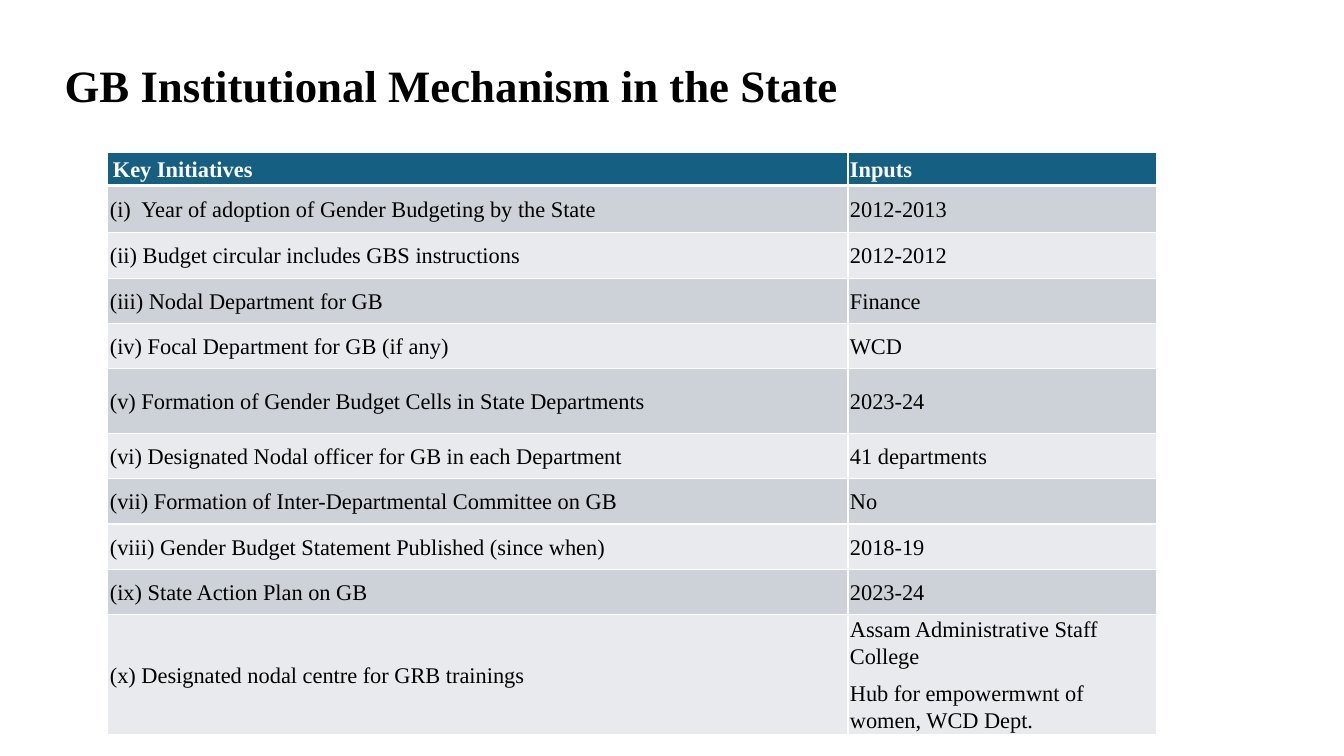
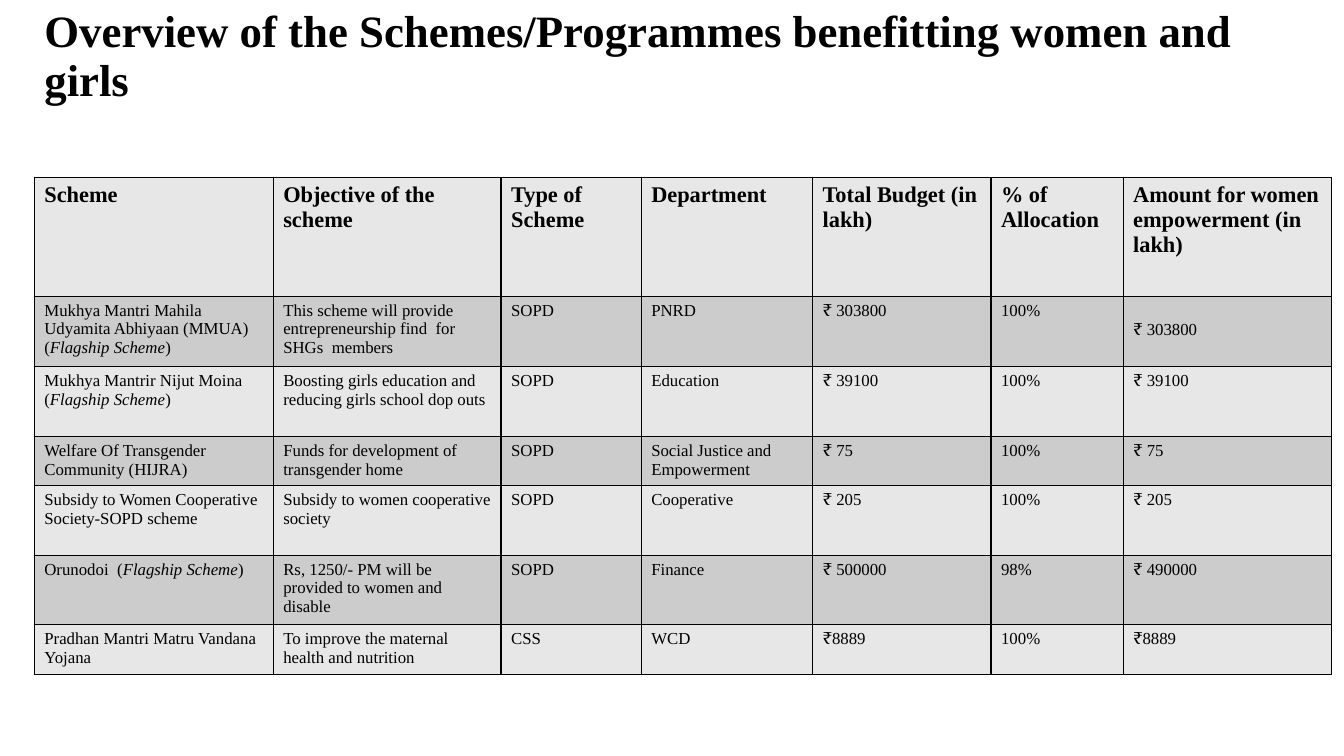
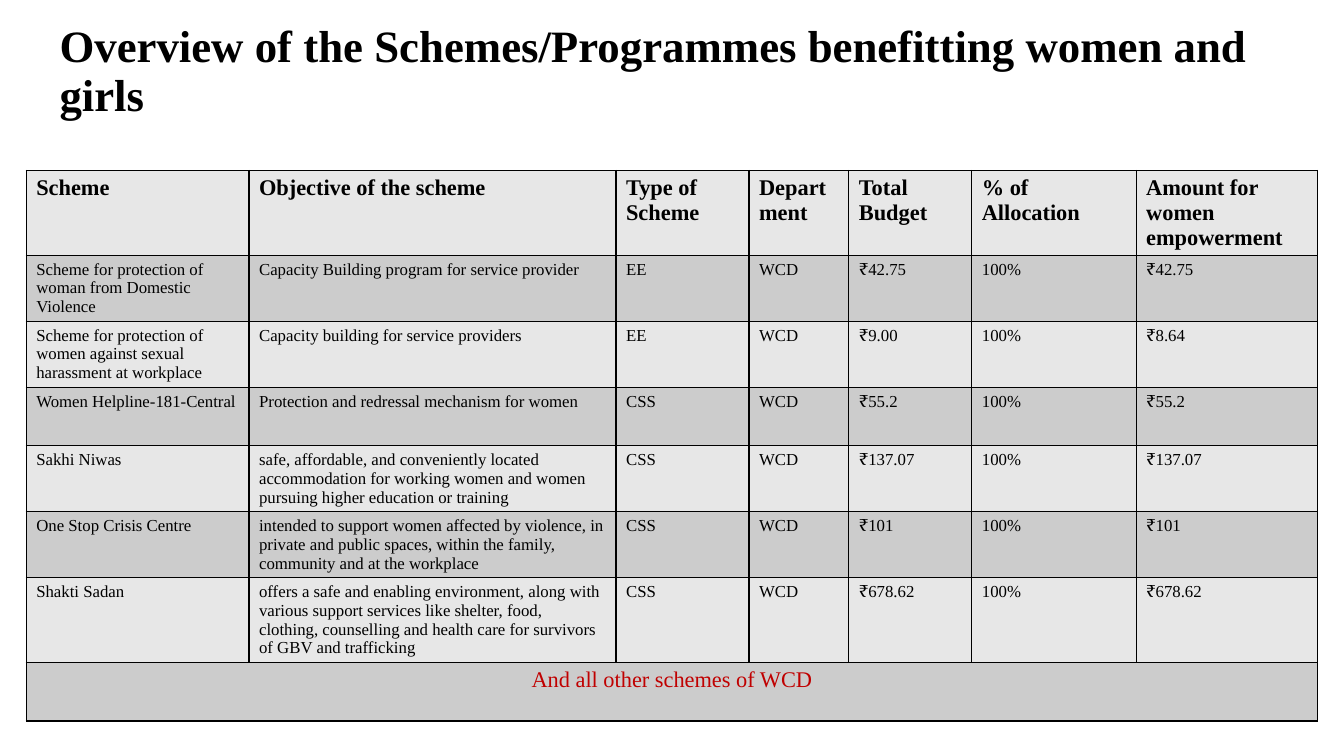
from dataclasses import dataclass
from pptx import Presentation
from pptx.dml.color import RGBColor as Rgb
from pptx.enum.text import MSO_ANCHOR as Anchor, MSO_AUTO_SIZE as Fit, PP_ALIGN as Align
from pptx.oxml import parse_xml
from pptx.oxml.ns import nsdecls
from pptx.util import Inches, Pt


@dataclass(frozen=True)
class Theme:
    font: str = "Times New Roman"
    ink: str = "000000"
    white: str = "FFFFFF"
    red: str = "C00000"
    blue: str = "156082"
    cool: tuple = ("CCD2D8", "E8EAED")
    gray: tuple = ("CCCCCC", "E7E7E7")
    title: int = 32
    head: int = 16
    body: int = 12


@dataclass(frozen=True)
class Look:
    fill: str
    bands: tuple
    edge: str
    head: str
    size: int
    pads: tuple
    anchor: object
    lead: float
    after: int
    rule: int


T = Theme()
MECH = Look(T.blue, T.cool, T.white, T.white, T.head, (0.02, 0.01, 0.02, 0.01),
            Anchor.MIDDLE, 1.07, 8, 3)
PLAN = Look(T.gray[1], T.gray, T.ink, T.ink, T.body, (0.1, 0.05, 0.1, 0.05),
            Anchor.TOP, 1.0, 0, 1)

OVER = "Overview of the Schemes/Programmes benefitting women and girls"

SLIDES = [
    dict(
        title="GB Institutional Mechanism in the State",
        box=(0.54, 0.44, 9.57, 0.87), look=MECH, at=(1.07, 1.51),
        cols=[7.34, 3.06],
        rows=[0.33, 0.47] + [0.45] * 3 + [0.64] + [0.45] * 5,
        pads={(0, 0): (0.05, 0, 0, 0)},
        cells=[
            ("Key Initiatives", "Inputs"),
            ("(i)  Year of adoption of Gender Budgeting by the State", "2012-2013"),
            ("(ii) Budget circular includes GBS instructions", "2012-2012"),
            ("(iii) Nodal Department for GB", "Finance"),
            ("(iv) Focal Department for GB (if any)", "WCD"),
            ("(v) Formation of Gender Budget Cells in State Departments", "2023-24"),
            ("(vi) Designated Nodal officer for GB in each Department", "41 departments"),
            ("(vii) Formation of Inter-Departmental Committee on GB", "No"),
            ("(viii) Gender Budget Statement Published (since when)", "2018-19"),
            ("(ix) State Action Plan on GB", "2023-24"),
            ("(x) Designated nodal centre for GRB trainings",
             "Assam Administrative Staff College\nHub for empowermwnt of women, WCD Dept."),
        ]),
    dict(
        title=OVER, box=(0.34, 0.11, 12.35, 0.92), look=PLAN, at=(0.34, 1.76),
        cols=[2.37, 2.26, 1.39, 1.7, 1.77, 1.31, 2.07],
        rows=[1.18, 0.7, 0.69, 0.49, 0.69, 0.69, 0.49],
        pads={(1, 6): (0.1, 0.24, 0.1, 0.05)},
        cells=[
            ("Scheme", "Objective of the scheme", "Type of Scheme", "Department",
             "Total Budget (in lakh)", "% of Allocation",
             "Amount for women empowerment (in lakh)"),
            ("Mukhya Mantri Mahila Udyamita Abhiyaan (MMUA) (*Flagship Scheme*)",
             "This scheme will provide entrepreneurship find  for SHGs  members",
             "SOPD", "PNRD", "₹ 303800", "100%", "₹ 303800"),
            ("Mukhya Mantrir Nijut Moina (*Flagship Scheme*)",
             "Boosting girls education and reducing girls school dop outs",
             "SOPD", "Education", "₹ 39100", "100%", "₹ 39100"),
            ("Welfare Of Transgender Community (HIJRA)",
             "Funds for development of transgender home",
             "SOPD", "Social Justice and Empowerment", "₹ 75", "100%", "₹ 75"),
            ("Subsidy to Women Cooperative Society-SOPD scheme",
             "Subsidy to women cooperative society",
             "SOPD", "Cooperative", "₹ 205", "100%", "₹ 205"),
            ("Orunodoi  (*Flagship Scheme*)",
             "Rs, 1250/- PM will be provided to women and disable",
             "SOPD", "Finance", "₹ 500000", "98%", "₹ 490000"),
            ("Pradhan Mantri Matru Vandana Yojana",
             "To improve the maternal health and nutrition",
             "CSS", "WCD", "₹8889", "100%", "₹8889"),
        ]),
    dict(
        title=OVER, box=(0.49, 0.26, 12.35, 0.92), look=PLAN, at=(0.26, 1.69),
        cols=[2.21, 3.64, 1.32, 0.99, 1.22, 1.63, 1.8],
        rows=[0.68] + [0.58] * 7,
        cells=[
            ("Scheme", "Objective of the scheme", "Type of Scheme", "Department",
             "Total Budget", "% of Allocation", "Amount for women empowerment"),
            ("Scheme for protection of woman from Domestic Violence",
             "Capacity Building program for service provider",
             "EE", "WCD", "₹42.75", "100%", "₹42.75"),
            ("Scheme for protection of women against sexual harassment at workplace",
             "Capacity building for service providers",
             "EE", "WCD", "₹9.00", "100%", "₹8.64"),
            ("Women Helpline-181-Central",
             "Protection and redressal mechanism for women",
             "CSS", "WCD", "₹55.2", "100%", "₹55.2"),
            ("Sakhi Niwas",
             "safe, affordable, and conveniently located accommodation for working "
             "women and women pursuing higher education or training",
             "CSS", "WCD", "₹137.07", "100%", "₹137.07"),
            ("One Stop Crisis Centre",
             "intended to support women affected by violence, in private and public "
             "spaces, within the family, community and at the workplace",
             "CSS", "WCD", "₹101", "100%", "₹101"),
            ("Shakti Sadan",
             "offers a safe and enabling environment, along with various support "
             "services like shelter, food, clothing, counselling and health care for "
             "survivors of GBV and trafficking",
             "CSS", "WCD", "₹678.62", "100%", "₹678.62"),
            ("And all other schemes of WCD",),
        ]),
]


def write(para, text, size, color, bold=False):
    for i, part in enumerate(text.split("*")):
        run = para.add_run()
        run.text = part
        font = run.font
        font.name, font.size = T.font, Pt(size)
        font.bold, font.italic = bold, i % 2 == 1
        font.color.rgb = Rgb.from_string(color)


def head(slide, text, box):
    shape = slide.shapes.title
    shape.left, shape.top, shape.width, shape.height = map(Inches, box)
    frame = shape.text_frame
    frame.word_wrap, frame.auto_size = True, Fit.NONE
    frame.vertical_anchor = Anchor.MIDDLE
    para = frame.paragraphs[0]
    para.alignment, para.line_spacing = Align.LEFT, 0.9
    write(para, text, T.title, T.ink, True)


def edge(cell, color, base):
    props = cell._tc.get_or_add_tcPr()
    for side in "LRTB":
        width = Pt(base if side == "B" else 1)
        props.append(parse_xml(
            f'<a:ln{side} {nsdecls("a")} w="{width}"><a:solidFill>'
            f'<a:srgbClr val="{color}"/></a:solidFill></a:ln{side}>'))


def paint(cell, look, row, pads):
    edge(cell, look.edge, 1 if row else look.rule)
    cell.fill.solid()
    cell.fill.fore_color.rgb = Rgb.from_string(
        look.bands[(row - 1) % 2] if row else look.fill)
    cell.vertical_anchor = look.anchor
    (cell.margin_left, cell.margin_top,
     cell.margin_right, cell.margin_bottom) = map(Inches, pads)


def fill(cell, text, look, row, wide):
    frame = cell.text_frame
    for i, line in enumerate(text.split("\n")):
        para = frame.add_paragraph() if i else frame.paragraphs[0]
        para.line_spacing, para.space_after = look.lead, Pt(look.after)
        if wide:
            para.alignment = Align.CENTER
            write(para, line, T.head, T.red)
        elif row:
            write(para, line, look.size, T.ink)
        else:
            write(para, line, T.head, look.head, True)


def grid(slide, at, cols, rows, look, cells, pads):
    size = sum(cols), sum(rows)
    table = slide.shapes.add_table(
        len(rows), len(cols), *map(Inches, at + size)).table
    table.first_row = table.horz_banding = False
    for col, width in zip(table.columns, cols):
        col.width = Inches(width)
    for r, (line, high) in enumerate(zip(cells, rows)):
        table.rows[r].height = Inches(high)
        wide = len(line) == 1
        if wide:
            table.cell(r, 0).merge(table.cell(r, len(cols) - 1))
        for c in range(len(cols)):
            paint(table.cell(r, c), look, r, pads.get((r, c), look.pads))
        for c, text in enumerate(line):
            fill(table.cell(r, c), text, look, r, wide)


def main():
    deck = Presentation()
    deck.slide_width, deck.slide_height = Inches(13.33), Inches(7.5)
    for item in SLIDES:
        slide = deck.slides.add_slide(deck.slide_layouts[5])
        head(slide, item["title"], item["box"])
        grid(slide, item["at"], item["cols"], item["rows"], item["look"],
             item["cells"], item.get("pads", {}))
    deck.save("out.pptx")


if __name__ == "__main__":
    main()
